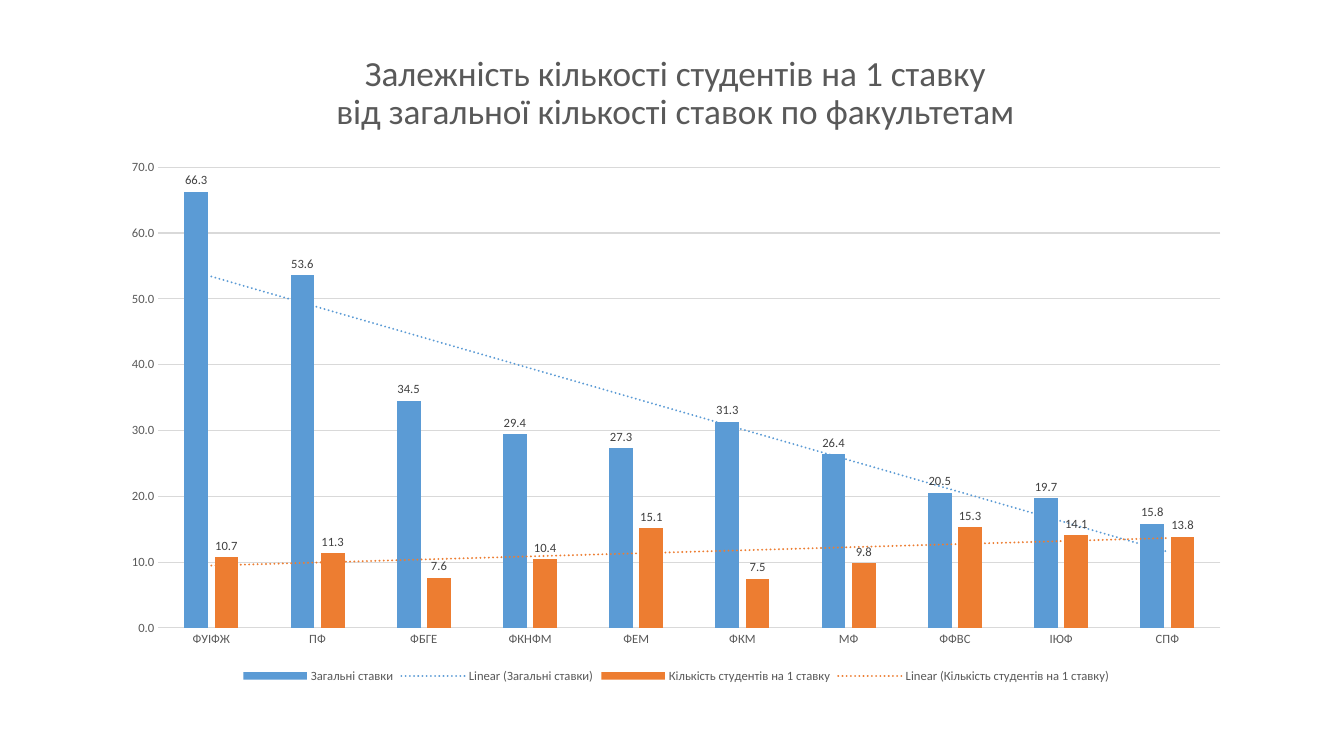
from pptx import Presentation
from pptx.chart.data import CategoryChartData as ChartData
from pptx.dml.color import RGBColor
from pptx.enum.chart import XL_CHART_TYPE as Chart, XL_LABEL_POSITION as LabelPos
from pptx.enum.chart import XL_LEGEND_POSITION as LegendPos, XL_TICK_MARK as Tick
from pptx.enum.text import MSO_ANCHOR as Anchor, MSO_AUTO_SIZE as AutoSize, PP_ALIGN as Align
from pptx.oxml import parse_xml
from pptx.oxml.ns import nsdecls
from pptx.util import Pt

COLORS = {
    "text": "595959",
    "label": "404040",
    "grid": "D9D9D9",
    "rates": "5B9BD5",
    "students": "ED7D31",
}

FACULTIES = ["ФУІФЖ", "ПФ", "ФБГЕ", "ФКНФМ", "ФЕМ", "ФКМ", "МФ", "ФФВС", "ІЮФ", "СПФ"]
SERIES = [
    ("Загальні ставки", "rates",
     [66.3, 53.6, 34.5, 29.4, 27.3, 31.3, 26.4, 20.5, 19.7, 15.8]),
    ("Кількість студентів на 1 ставку", "students",
     [10.7, 11.3, 7.6, 10.4, 15.1, 7.5, 9.8, 15.3, 14.1, 13.8]),
]


def rgb(name):
    return RGBColor.from_string(COLORS[name])


def set_font(font, size, color, name="Calibri"):
    font.name = name
    font.size = Pt(size)
    font.bold = False
    font.color.rgb = rgb(color)


def write(tf, text, size=18, color="text", align=Align.LEFT, spacing=1.0):
    tf.text = text
    p = tf.paragraphs[0]
    p.alignment = align
    p.line_spacing = spacing
    for r in p.runs:
        set_font(r.font, size, color)


class SlideBuilder:
    def __init__(self, prs, font_size=9):
        self.s = prs.slides.add_slide(prs.slide_layouts[5])
        self.font_size = font_size

    def title(self, text, left, top, width, height):
        sp = self.s.shapes.title
        sp.left, sp.top, sp.width, sp.height = Pt(left), Pt(top), Pt(width), Pt(height)
        tf = sp.text_frame
        tf.word_wrap = True
        tf.auto_size = AutoSize.NONE
        tf.vertical_anchor = Anchor.BOTTOM
        write(tf, text, size=25.2, align=Align.CENTER, spacing=0.9)

    def column_chart(self, left, top, width, height):
        data = ChartData(number_format="0.0")
        data.categories = FACULTIES
        for name, _, values in SERIES:
            data.add_series(name, values)
        chart = self.s.shapes.add_chart(
            Chart.COLUMN_CLUSTERED, Pt(left), Pt(top), Pt(width), Pt(height), data).chart
        chart.has_title = False
        chart.font.name = "Calibri"
        chart.font.size = Pt(10)
        plot = chart.plots[0]
        plot.gap_width = 219
        plot.overlap = -27
        plot.vary_by_categories = False
        for series, (_, color, _) in zip(plot.series, SERIES):
            self.format_series(series, color)
        self.axes(chart)
        chart.has_legend = True
        chart.legend.position = LegendPos.BOTTOM
        chart.legend.include_in_layout = False
        set_font(chart.legend.font, self.font_size, "text")

    def format_series(self, series, color):
        series.format.fill.solid()
        series.format.fill.fore_color.rgb = rgb(color)
        series.invert_if_negative = False
        labels = series.data_labels
        labels.show_value = True
        labels.number_format = "0.0"
        labels.number_format_is_linked = False
        labels.position = LabelPos.OUTSIDE_END
        set_font(labels.font, self.font_size, "label")
        self.trend_line(series, color)

    def trend_line(self, series, color):
        trend = parse_xml(
            f'<c:trendline {nsdecls("c", "a")}><c:spPr><a:ln w="{Pt(1.5)}" cap="rnd">'
            f'<a:solidFill><a:srgbClr val="{COLORS[color]}"/></a:solidFill>'
            '<a:prstDash val="sysDot"/></a:ln></c:spPr><c:trendlineType val="linear"/>'
            '<c:dispRSqr val="0"/><c:dispEq val="0"/></c:trendline>')
        series.data_labels._element.addnext(trend)

    def axes(self, chart):
        cat, val = chart.category_axis, chart.value_axis
        for axis in (cat, val):
            axis.major_tick_mark = axis.minor_tick_mark = Tick.NONE
            set_font(axis.tick_labels.font, self.font_size, "text")
        val.minimum_scale, val.maximum_scale, val.major_unit = 0, 70, 10
        val.tick_labels.number_format = "0.0"
        val.tick_labels.number_format_is_linked = False
        val.format.line.fill.background()
        val.has_major_gridlines = True
        for line in (cat.format.line, val.major_gridlines.format.line):
            line.width = Pt(0.75)
            line.color.rgb = rgb("grid")


def main():
    prs = Presentation()
    prs.slide_width, prs.slide_height = Pt(960), Pt(540)
    slide = SlideBuilder(prs)
    slide.title("Залежність кількості студентів на 1 ставку\v"
                "від загальної кількості ставок по факультетам", 119.5, 42.5, 726, 55.5)
    slide.column_chart(78, 106.5, 810, 384.5)
    prs.save("out.pptx")


if __name__ == "__main__":
    main()
